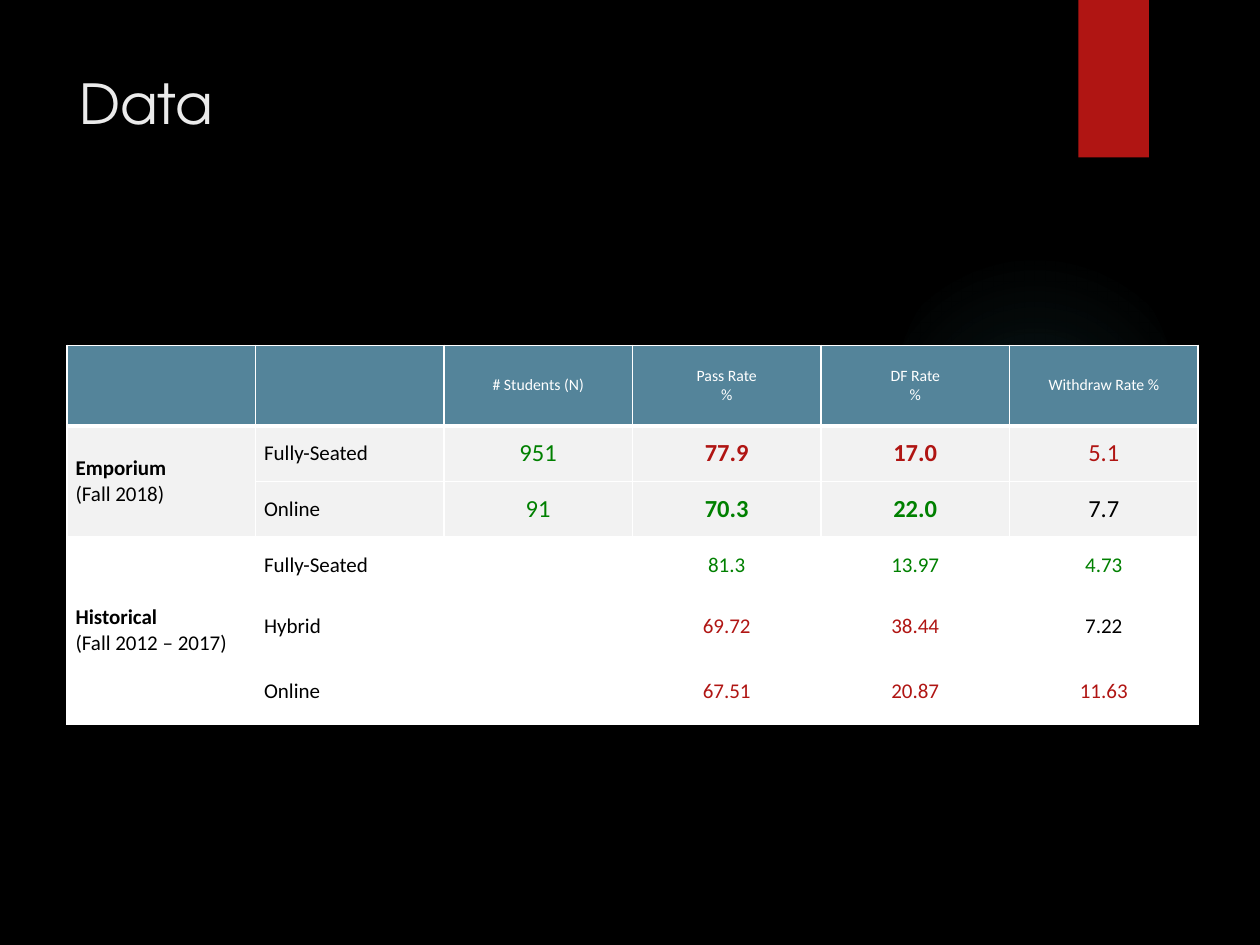
from lxml.etree import SubElement
from pptx import Presentation
from pptx.dml.color import RGBColor
from pptx.enum.shapes import MSO_SHAPE as SHAPE
from pptx.enum.text import MSO_ANCHOR as ANCHOR, PP_ALIGN as ALIGN
from pptx.oxml import parse_xml
from pptx.oxml.ns import nsdecls, qn
from pptx.util import Inches, Pt

BLACK = RGBColor(0x00, 0x00, 0x00)
WHITE = RGBColor(0xFF, 0xFF, 0xFF)
OFF_WHITE = RGBColor(0xEB, 0xEB, 0xEB)
GRAY = RGBColor(0xF2, 0xF2, 0xF2)
RED = RGBColor(0xB0, 0x15, 0x13)
GREEN = RGBColor(0x00, 0x80, 0x00)
BLUE = RGBColor(0x54, 0x84, 0x9A)
TEAL = RGBColor(0x50, 0xB9, 0xC1)

# Content: each value is (text, colour, bold)
TITLE = "Data"
HEADERS = ["", "", "# Students (N)", "Pass Rate\n%", "DF Rate\n%", "Withdraw Rate %"]
GROUPS = [
    ("Emporium", "(Fall 2018)", GRAY, [
        ("Fully-Seated", [("951", GREEN, False), ("77.9", RED, True),
                          ("17.0", RED, True), ("5.1", RED, False)]),
        ("Online", [("91", GREEN, False), ("70.3", GREEN, True),
                    ("22.0", GREEN, True), ("7.7", BLACK, False)]),
    ]),
    ("Historical", "(Fall 2012 – 2017)", WHITE, [
        ("Fully-Seated", [("", BLACK, False), ("81.3", GREEN, False),
                          ("13.97", GREEN, False), ("4.73", GREEN, False)]),
        ("Hybrid", [("", BLACK, False), ("69.72", RED, False),
                    ("38.44", RED, False), ("7.22", BLACK, False)]),
        ("Online", [("", BLACK, False), ("67.51", RED, False),
                    ("20.87", RED, False), ("11.63", RED, False)]),
    ]),
]
VALUE_SIZES = {"Emporium": 14, "Historical": 12}
ROW_HEIGHTS = [0.64, 0.44, 0.44, 0.46, 0.51, 0.52]
TABLE_LEFT, TABLE_TOP, TABLE_WIDTH = 0.53, 2.74, 8.98


def write(tf, text, size=12, color=BLACK, font="Calibri", bolds=(False,), align=ALIGN.LEFT):
    """Write one paragraph per line; the last bold flag holds for the rest."""
    for i, line in enumerate(text.split("\n")):
        p = tf.add_paragraph() if i else tf.paragraphs[0]
        p.alignment = align
        r = p.add_run()
        r.text = line
        r.font.name, r.font.size = font, Pt(size)
        r.font.color.rgb = color
        r.font.bold = bolds[min(i, len(bolds) - 1)]


def style_cell(cell, fill, bottom=1):
    cell.margin_left = cell.margin_right = Inches(0.07)
    cell.margin_top = cell.margin_bottom = Inches(0.04)
    cell.vertical_anchor = ANCHOR.MIDDLE
    tcPr = cell._tc.get_or_add_tcPr()
    for side, width in (("L", 1), ("R", 1), ("T", 1), ("B", bottom)):
        ln = SubElement(tcPr, qn(f"a:ln{side}"), w=str(Pt(width)))
        solid = SubElement(ln, qn("a:solidFill"))
        SubElement(solid, qn("a:srgbClr"), val=str(WHITE))
    cell.fill.solid()
    cell.fill.fore_color.rgb = fill


def add_shape(kind, left, top, width, height, fill):
    sp = s.shapes.add_shape(kind, *map(Inches, (left, top, width, height)))
    sp.shadow.inherit = False
    sp.fill.solid()
    sp.fill.fore_color.rgb = fill
    sp.line.fill.background()
    return sp


prs = Presentation()
prs.slide_width, prs.slide_height = Inches(10), Inches(7.5)
s = prs.slides.add_slide(prs.slide_layouts[5])
s.background.fill.solid()
s.background.fill.fore_color.rgb = BLACK

# Soft glow behind the table
glow = add_shape(SHAPE.OVAL, 7.06, 1.83, 2.31, 3.08, TEAL)
stops = "".join(
    f'<a:gs pos="{pos * 1000}"><a:srgbClr val="{TEAL}"><a:alpha val="{alpha * 1000}"/></a:srgbClr></a:gs>'
    for pos, alpha in ((0, 7), (36, 6), (69, 0), (100, 0)))
spPr = glow._element.spPr
spPr.replace(spPr.find(qn("a:solidFill")), parse_xml(
    f'<a:gradFill {nsdecls("a")} rotWithShape="1"><a:gsLst>{stops}</a:gsLst><a:path path="circle">'
    '<a:fillToRect l="50000" t="50000" r="50000" b="50000"/></a:path></a:gradFill>'))

# Red tab with its shadow
tab = add_shape(SHAPE.RECTANGLE, 8.56, 0, 0.56, 1.25, RED)
shadow = SubElement(tab._element.spPr.find(qn("a:effectLst")), qn("a:outerShdw"),
                    blurRad=str(Pt(3)), dist=str(Pt(2)), dir="5400000", rotWithShape="0")
SubElement(SubElement(shadow, qn("a:srgbClr"), val=str(BLACK)), qn("a:alpha"), val="45000")

# Title
title = s.shapes.title
title.left, title.top, title.width, title.height = map(Inches, (0.53, 0.5, 7.71, 1.53))
title.text_frame.vertical_anchor = ANCHOR.TOP
write(title.text_frame, TITLE, size=31.5, color=OFF_WHITE, font="TeX Gyre Adventor")

# Table grid
table = s.shapes.add_table(
    len(ROW_HEIGHTS), len(HEADERS), Inches(TABLE_LEFT), Inches(TABLE_TOP),
    Inches(TABLE_WIDTH), Inches(sum(ROW_HEIGHTS))).table
for row, height in zip(table.rows, ROW_HEIGHTS):
    row.height = Inches(height)

# Header row
for col, text in enumerate(HEADERS):
    cell = table.cell(0, col)
    style_cell(cell, BLUE, bottom=3)
    if text:
        write(cell.text_frame, text, size=9, color=WHITE, align=ALIGN.CENTER)

# Body rows, one merged label per group
row = 1
for name, period, fill, lines in GROUPS:
    label = table.cell(row, 0)
    label.merge(table.cell(row + len(lines) - 1, 0))
    write(label.text_frame, f"{name}\n{period}", bolds=(True, False))
    for mode, values in lines:
        for col in range(len(HEADERS)):
            style_cell(table.cell(row, col), fill)
        write(table.cell(row, 1).text_frame, mode)
        for col, (text, color, bold) in enumerate(values, start=2):
            if text:
                write(table.cell(row, col).text_frame, text, size=VALUE_SIZES[name],
                      color=color, bolds=(bold,), align=ALIGN.CENTER)
        row += 1

prs.save("out.pptx")
